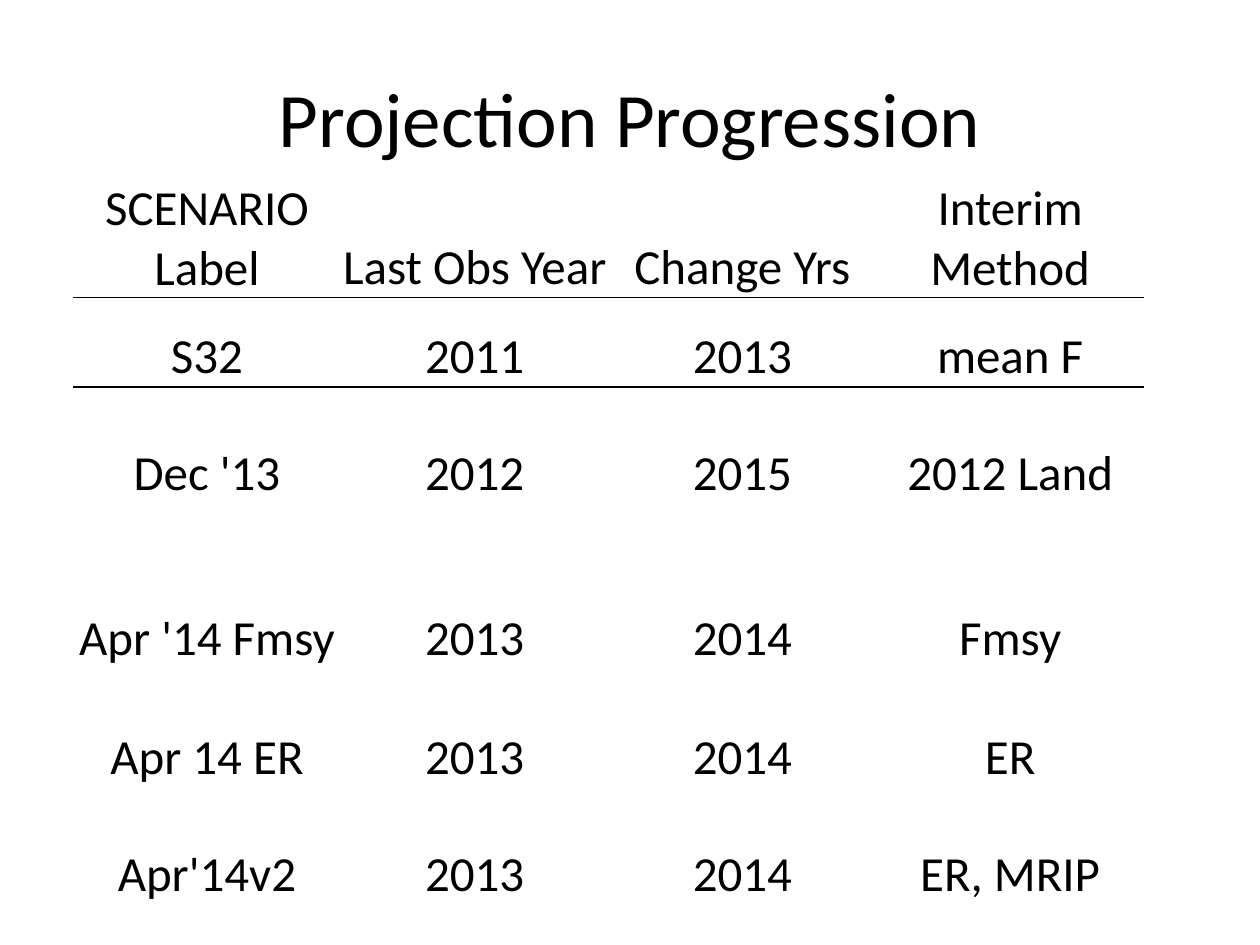
from lxml import etree
from pptx import Presentation
from pptx.dml.color import RGBColor
from pptx.enum.text import MSO_ANCHOR, PP_ALIGN
from pptx.oxml.ns import qn
from pptx.util import Inches, Pt

BLACK = "000000"
PLAIN_TABLE_STYLE = "{2D5ABB26-0587-4C30-8999-92F81FD0307C}"
NO_MARGINS = {
    "margin_left": 0,
    "margin_right": 0,
    "margin_top": 0,
    "margin_bottom": 0,
}
ROW_HEIGHTS = [0.94, 0.71, 0.93, 1.31, 0.94, 0.93]
SCENARIOS = [
    ["SCENARIO Label", "Last Obs Year", "Change Yrs", "Interim Method"],
    ["S32", "2011", "2013", "mean F"],
    ["Dec '13", "2012", "2015", "2012 Land"],
    ["Apr '14 Fmsy", "2013", "2014", "Fmsy"],
    ["Apr 14 ER", "2013", "2014", "ER"],
    ["Apr'14v2", "2013", "2014", "ER, MRIP"],
]


def color(value):
    return RGBColor.from_string(value)


def write_text(para, text, size):
    para.alignment = PP_ALIGN.CENTER
    span = para.add_run()
    span.text = text
    span.font.color.rgb = color(BLACK)
    for name, value in {"name": "Calibri", "size": Pt(size)}.items():
        setattr(span.font, name, value)


def add_border(cell, side):
    properties = cell._tc.get_or_add_tcPr()
    line = etree.Element(qn(f"a:ln{side}"), w=str(Pt(1)))
    fill = etree.SubElement(line, qn("a:solidFill"))
    etree.SubElement(fill, qn("a:srgbClr"), val=BLACK)
    # Border lines come before the cell fill in the schema
    properties.insert(0, line)


def add_title(page, left, top, width, height):
    box = page.shapes.add_textbox(
        Inches(left), Inches(top), Inches(width), Inches(height))
    frame = box.text_frame
    frame.word_wrap = True
    frame.vertical_anchor = MSO_ANCHOR.MIDDLE
    write_text(frame.paragraphs[0], "Projection Progression", 44)


def add_scenario_table(page, left, top, width, height):
    frame = page.shapes.add_table(
        len(SCENARIOS), len(SCENARIOS[0]),
        Inches(left), Inches(top), Inches(width), Inches(height))
    table = frame.table
    table.first_row = table.horz_banding = False
    table._tbl.tblPr.find(qn("a:tableStyleId")).text = PLAIN_TABLE_STYLE

    # Equal columns, rows scaled to the box
    for column in table.columns:
        column.width = Inches(width / len(SCENARIOS[0]))
    for row, row_height in zip(table.rows, ROW_HEIGHTS):
        row.height = Inches(height * row_height / sum(ROW_HEIGHTS))

    for row_index, labels in enumerate(SCENARIOS):
        for column_index, label in enumerate(labels):
            cell = table.cell(row_index, column_index)
            cell.fill.background()
            cell.vertical_anchor = MSO_ANCHOR.BOTTOM
            for name, value in NO_MARGINS.items():
                setattr(cell, name, value)
            write_text(cell.text_frame.paragraphs[0], label, 28)
            # Rule between the header and the first scenario
            if row_index < 2:
                add_border(cell, "B" if row_index == 0 else "T")


def main():
    deck = Presentation()
    deck.slide_width, deck.slide_height = Inches(10), Inches(7.5)
    page = deck.slides.add_slide(deck.slide_layouts[6])
    page.background.fill.solid()
    page.background.fill.fore_color.rgb = color("FFFFFF")
    add_title(page, 0.5, 0.3, 9, 1.25)
    add_scenario_table(page, 0.58, 1.42, 8.5, 5.76)
    deck.save("out.pptx")


if __name__ == "__main__":
    main()
